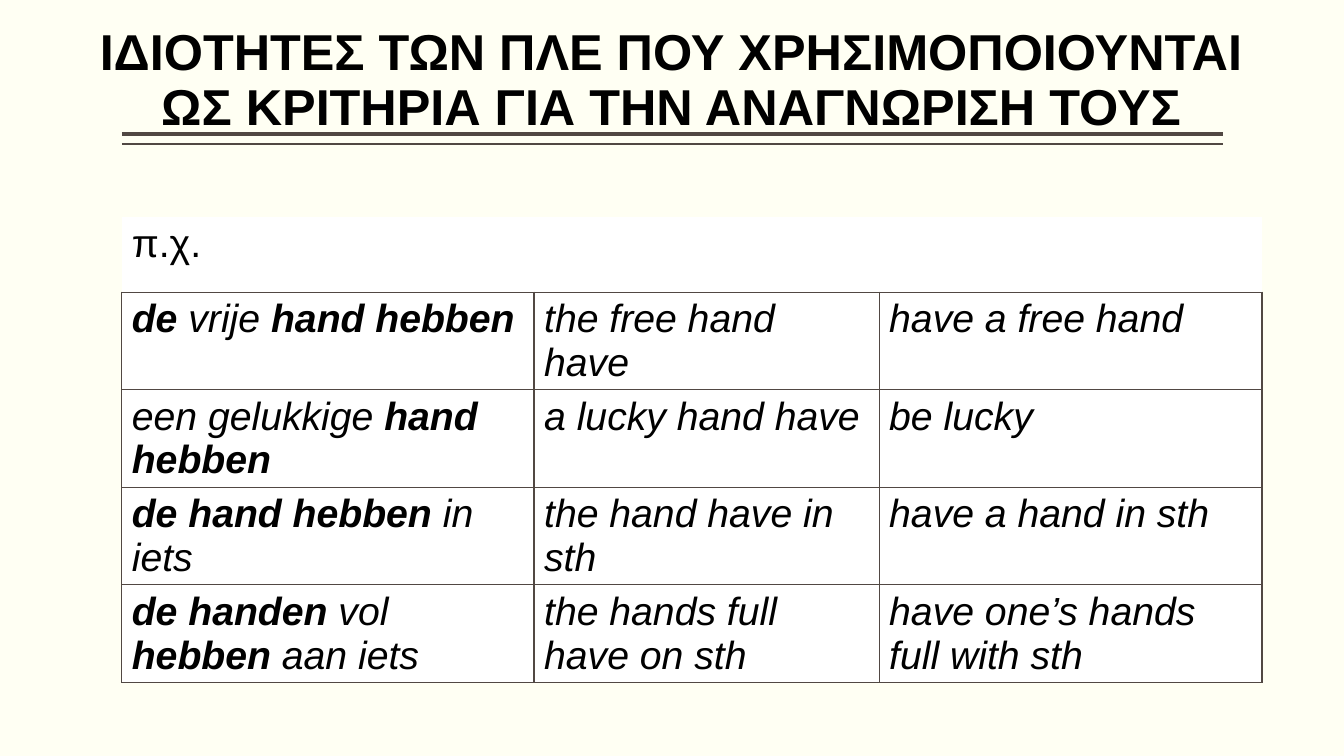
from pptx import Presentation
from pptx.dml.color import RGBColor
from pptx.enum.shapes import MSO_CONNECTOR
from pptx.enum.text import MSO_ANCHOR, MSO_AUTO_SIZE, PP_ALIGN
from pptx.oxml import parse_xml
from pptx.oxml.ns import nsdecls
from pptx.util import Pt

LINE = MSO_CONNECTOR.STRAIGHT
BOTTOM = MSO_ANCHOR.BOTTOM
NO_FIT = MSO_AUTO_SIZE.NONE
CENTER = PP_ALIGN.CENTER

TITLE = "ΙΔΙΟΤΗΤΕΣ ΤΩΝ ΠΛΕ ΠΟΥ ΧΡΗΣΙΜΟΠΟΙΟΥΝΤΑΙ ΩΣ ΚΡΙΤΗΡΙΑ ΓΙΑ ΤΗΝ ΑΝΑΓΝΩΡΙΣΗ ΤΟΥΣ"
HEADER = "π.χ."
IDIOMS = [
    ([("de ", True), ("vrije ", False), ("hand hebben", True)],
     "the free hand have", "have a free hand"),
    ([("een gelukkige ", False), ("hand hebben", True)],
     "a lucky hand have", "be lucky"),
    ([("de hand hebben ", True), ("in iets", False)],
     "the hand have in sth", "have a hand in sth"),
    ([("de handen ", True), ("vol ", False), ("hebben ", True), ("aan iets", False)],
     "the hands full have on sth", "have one’s hands full with sth"),
]
COL_WIDTHS = [294.5, 246.5, 273.5]
HEADER_HEIGHT, ROW_HEIGHT = 54, 69.6
RULES = [(95.8, 3), (103, 1)]
RULE_LEFT, RULE_RIGHT = 87, 873.4
INK, PAPER, WHITE, BLACK = "514843", "FFFFF3", "FFFFFF", "000000"
TITLE_FONT = {"name": "Arial", "size": Pt(36), "bold": True}
HEADER_FONT = {"name": "Arial", "size": Pt(28), "bold": False}
IDIOM_FONT = {**HEADER_FONT, "italic": True}


def color(value):
    return RGBColor.from_string(value)


def add_run(p, text, fmt):
    r = p.add_run()
    r.text = text
    for name, value in fmt.items():
        setattr(r.font, name, value)
    r.font.color.rgb = color(BLACK)


def style_cell(cell, drawn_sides):
    tc_pr = cell._tc.get_or_add_tcPr()
    for side in "LRTB":
        if side in drawn_sides:
            fill = f'<a:solidFill><a:srgbClr val="{INK}"/></a:solidFill>'
        else:
            fill = "<a:noFill/>"
        tc_pr.append(parse_xml(
            f'<a:ln{side} {nsdecls("a")} w="{Pt(1)}">{fill}</a:ln{side}>'))
    cell.fill.solid()
    cell.fill.fore_color.rgb = color(WHITE)


prs = Presentation()
prs.slide_width, prs.slide_height = Pt(960), Pt(540)
s = prs.slides.add_slide(prs.slide_layouts[5])
s.background.fill.solid()
s.background.fill.fore_color.rgb = color(PAPER)

for y, width in RULES:
    rule = s.shapes.add_connector(LINE, Pt(RULE_LEFT), Pt(y), Pt(RULE_RIGHT), Pt(y))
    rule.line.color.rgb = color(INK)
    rule.line.width = Pt(width)
    rule._element.spPr.append(parse_xml(f'<a:effectLst {nsdecls("a")}/>'))

title = s.shapes.title
title.left, title.top, title.width, title.height = Pt(57.6), Pt(18), Pt(844), Pt(82.8)
tf = title.text_frame
tf_format = {"word_wrap": True, "auto_size": NO_FIT, "vertical_anchor": BOTTOM,
             "margin_left": 0, "margin_right": 0,
             "margin_top": Pt(3.6), "margin_bottom": Pt(3.6)}
for name, value in tf_format.items():
    setattr(tf, name, value)
p = tf.paragraphs[0]
p.alignment = CENTER
p.line_spacing = 0.9
add_run(p, TITLE, TITLE_FONT)

table = s.shapes.add_table(
    len(IDIOMS) + 1, len(COL_WIDTHS), Pt(87), Pt(154.8), Pt(sum(COL_WIDTHS)),
    Pt(HEADER_HEIGHT + ROW_HEIGHT * len(IDIOMS))).table
table.first_row = table.horz_banding = False
for col, width in zip(table.columns, COL_WIDTHS):
    col.width = Pt(width)
for i, row in enumerate(table.rows):
    row.height = Pt(ROW_HEIGHT if i else HEADER_HEIGHT)
    for cell in row.cells:
        style_cell(cell, "LRTB" if i else "B")

add_run(table.cell(0, 0).text_frame.paragraphs[0], HEADER, HEADER_FONT)
for i, (dutch, gloss, meaning) in enumerate(IDIOMS, 1):
    for j, runs in enumerate([dutch, [(gloss, False)], [(meaning, False)]]):
        p = table.cell(i, j).text_frame.paragraphs[0]
        for text, bold in runs:
            add_run(p, text, {**IDIOM_FONT, "bold": bold})

prs.save("out.pptx")
